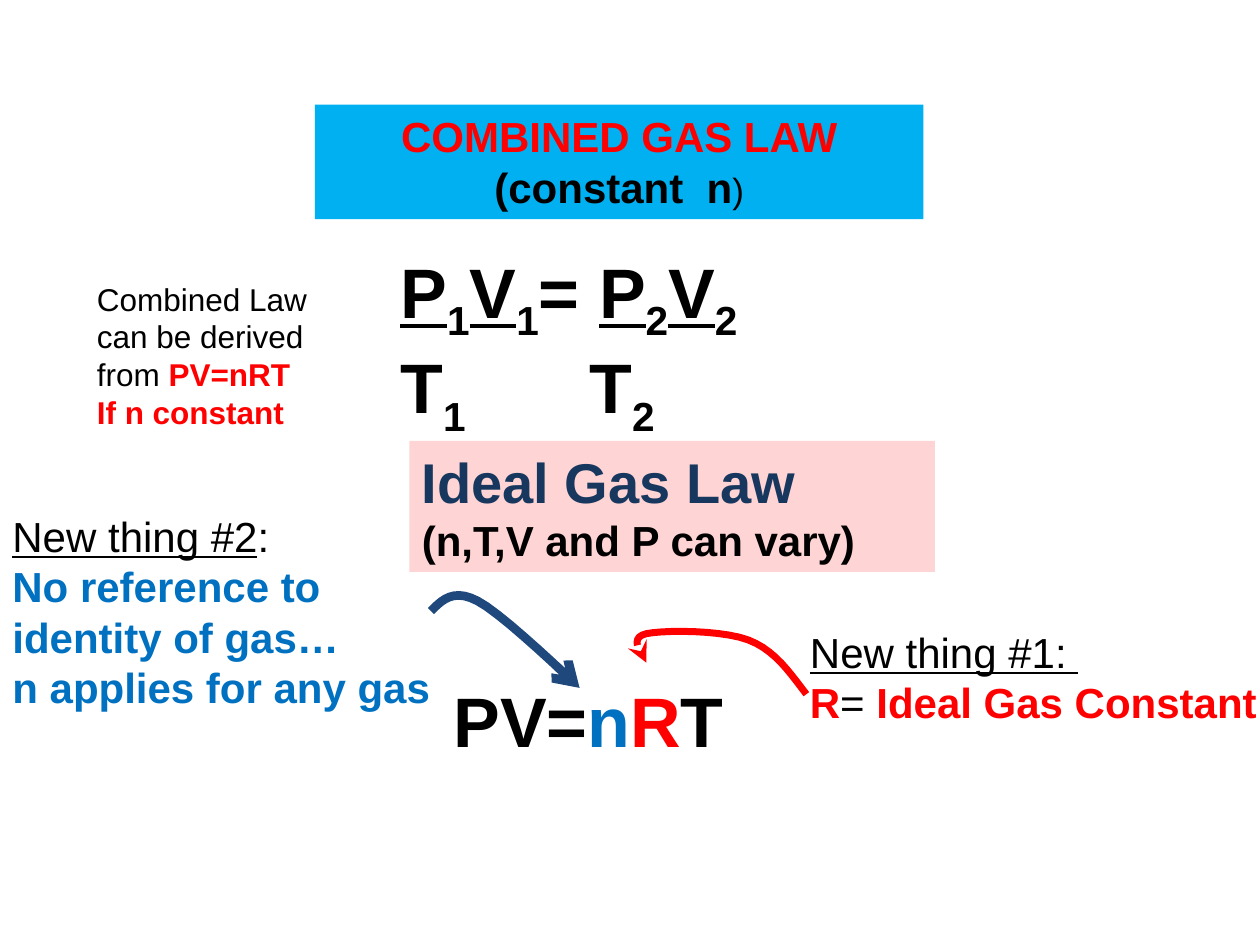
from lxml import etree
from pptx import Presentation
from pptx import util as u
from pptx.dml import color
from pptx.enum import shapes, text
from pptx.oxml import ns

BLACK, RED, BLUE, NAVY = "000000", "FF0000", "0070C0", "17375E"


def rgb(value):
    return color.RGBColor.from_string(value)


class Deck:
    """Holds the text style and the current slide, and draws each kind of element."""

    font = "Arial"

    def __init__(self, width, height):
        self.prs = Presentation()
        self.prs.slide_width, self.prs.slide_height = u.Inches(width), u.Inches(height)
        self.s = self.prs.slides.add_slide(self.prs.slide_layouts[6])

    def add_run(self, p, words, size, hue=BLACK, bold=False, line=False, sub=False):
        r = p.add_run()
        r.text = words
        f = r.font
        f.name, f.size, f.bold, f.underline = self.font, u.Pt(size), bold, line
        f.color.rgb = rgb(hue)
        if sub:
            r._r.get_or_add_rPr().set("baseline", "-25000")

    def add_text(self, sp, paragraphs, align=text.PP_ALIGN.LEFT):
        tf = sp.text_frame
        tf.word_wrap = True
        tf.vertical_anchor = text.MSO_ANCHOR.TOP
        for i, runs in enumerate(paragraphs):
            p = tf.add_paragraph() if i else tf.paragraphs[0]
            p.alignment = align
            for words, size, *style in runs:
                self.add_run(p, words, size, *style)

    def label(self, box, paragraphs):
        sp = self.s.shapes.add_textbox(*map(u.Inches, box))
        self.add_text(sp, paragraphs)

    def panel(self, box, fill, paragraphs, align=text.PP_ALIGN.LEFT, alpha=None):
        sp = self.s.shapes.add_shape(shapes.MSO_SHAPE.RECTANGLE, *map(u.Inches, box))
        sp.shadow.inherit = False
        sp.fill.solid()
        sp.fill.fore_color.rgb = rgb(fill)
        sp.line.fill.background()
        if alpha is not None:
            srgb = sp._element.spPr.find(".//" + ns.qn("a:srgbClr"))
            etree.SubElement(srgb, ns.qn("a:alpha"), val=str(alpha * 1000))
        self.add_text(sp, paragraphs, align)

    def curve(self, start, beziers, hue, width, head, steps=10):
        points, a = [], start
        for b, c, d in beziers:
            for t in (i / steps for i in range(1, steps + 1)):
                k = 1 - t
                points.append(tuple(
                    u.Inches(k**3 * a[j] + 3 * k * k * t * b[j] + 3 * k * t * t * c[j] + t**3 * d[j])
                    for j in (0, 1)))
            a = d
        builder = self.s.shapes.build_freeform(*map(u.Inches, start))
        builder.add_line_segments(points, close=False)
        sp = builder.convert_to_shape()
        sp.shadow.inherit = False
        sp.fill.background()
        sp.line.color.rgb = rgb(hue)
        sp.line.width = u.Pt(width)
        ln = sp._element.spPr.find(ns.qn("a:ln"))
        etree.SubElement(ln, ns.qn("a:tailEnd"), type=head)


def gas_side(n):
    return [("P", 40, BLACK, True, True), (n, 40, BLACK, True, False, True),
            ("V", 40, BLACK, True, True), (n, 40, BLACK, True, False, True)]


def temperature(words, n):
    return [(words, 40, BLACK, True), (n, 40, BLACK, True, False, True)]


def main():
    deck = Deck(10, 7.5)
    deck.panel((2.5, 0.83, 4.83, 0.91), "00B0F0", [
        [("COMBINED GAS LAW ", 24, RED, True), ("(constant  n", 24, BLACK, True), (")", 20)],
    ], text.PP_ALIGN.CENTER)
    deck.label((3.08, 1.92, 3.75, 1.45), [
        gas_side("1") + [("= ", 40, BLACK, True)] + gas_side("2"),
        temperature("T", "1") + temperature("\t\tT", "2"),
    ])
    deck.panel((3.25, 3.5, 4.17, 1.04), RED, [
        [("Ideal Gas Law", 32, NAVY, True)],
        [("(n,T,V and P can vary)", 24, BLACK, True)],
    ], alpha=17)
    deck.label((3.5, 5.33, 3.08, 0.77), [
        [("PV=", 40, BLACK, True), ("n", 40, BLUE, True),
         ("R", 40, RED, True), ("T", 40, BLACK, True)],
    ])
    deck.label((6.33, 4.92, 4.17, 0.91), [
        [("New thing #1: ", 24, BLACK, False, True)],
        [("R", 24, RED, True), ("= ", 24), ("Ideal Gas Constant", 24, RED, True)],
    ])
    deck.curve((6.4, 5.51), [
        ((6.27, 5.34), (6.15, 5.16), (5.94, 5.08)),
        ((5.73, 5), (5.27, 5), (5.13, 5.03)),
        ((5, 5.06), (5.07, 5.16), (5.13, 5.26)),
    ], RED, 4, "stealth")
    deck.label((0.67, 2.17, 1.92, 1.31), [
        [("Combined Law can be derived from ", 18), ("PV=nRT", 18, RED, True)],
        [("If n constant", 18, RED, True)],
    ])
    deck.label((0, 4, 3.58, 1.72), [
        [("New thing #2", 24, BLACK, False, True), (":", 24)],
        [("No reference to  identity of gas…", 24, BLUE, True)],
        [("n applies for any gas", 24, BLUE, True)],
    ])
    deck.curve((3.42, 4.85), [
        ((3.51, 4.76), (3.6, 4.67), (3.79, 4.77)),
        ((3.99, 4.87), (4.6, 5.46), (4.6, 5.46)),
    ], "1F497D", 5, "arrow")
    deck.prs.save("out.pptx")


if __name__ == "__main__":
    main()
